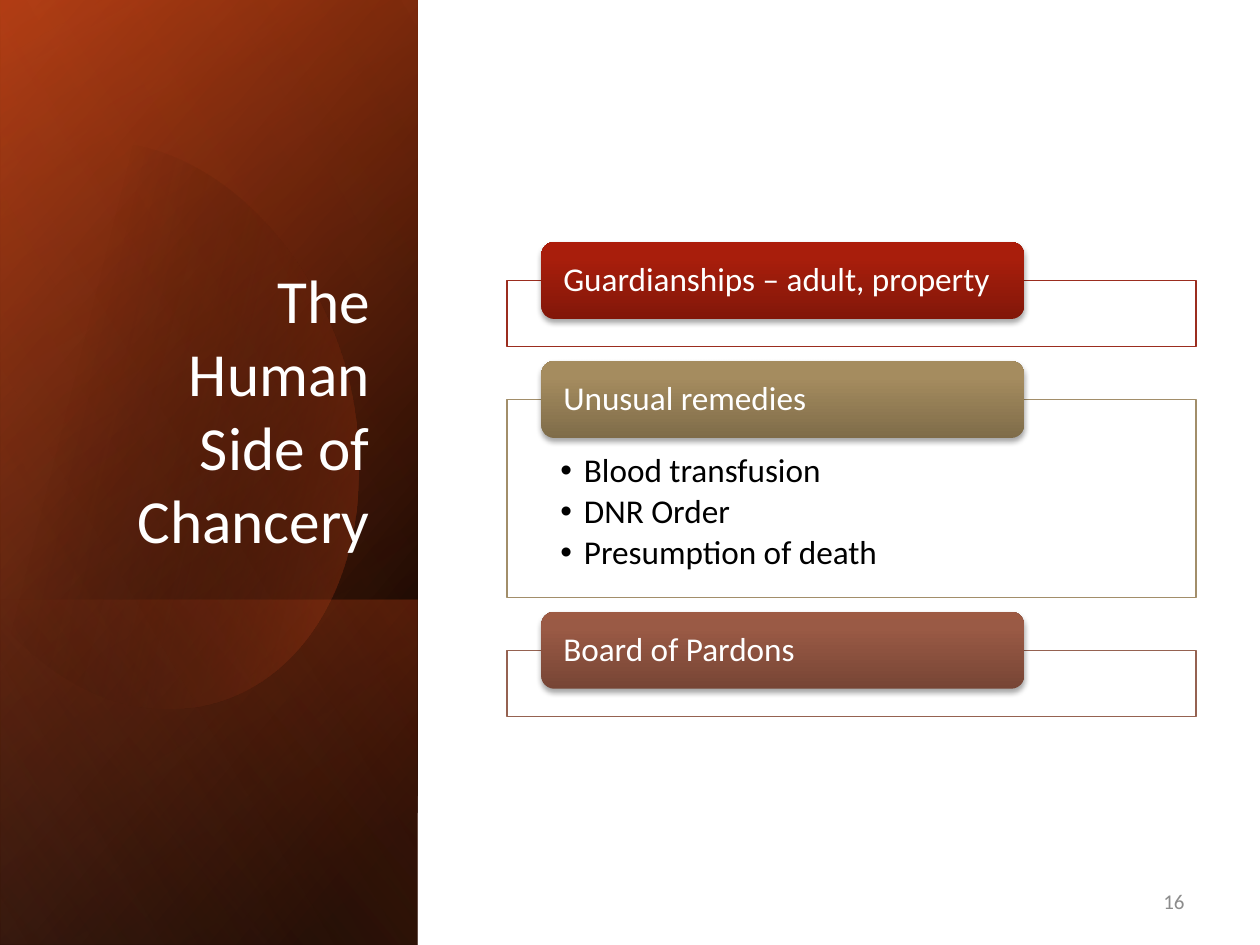
from dataclasses import dataclass
from typing import Any

import pptx
import pptx.dml.color
import pptx.enum.shapes
import pptx.enum.text
import pptx.oxml
import pptx.oxml.ns
import pptx.util

Pt = pptx.util.Pt
Anchor = pptx.enum.text.MSO_ANCHOR
Align = pptx.enum.text.PP_ALIGN
ShapeType = pptx.enum.shapes.MSO_SHAPE
Stop = tuple[int, str, int]


@dataclass(frozen=True)
class Theme:
    font: str = "Calibri"
    white: str = "FFFFFF"
    black: str = "000000"
    grey: str = "8C8C8C"
    rust: str = "D34817"
    brown: str = "9E3611"
    peach: str = "EF8C6A"
    title_size: float = 35
    body_size: float = 19
    number_size: float = 12


@dataclass(frozen=True)
class Box:
    left: float
    top: float
    width: float
    height: float

    def lengths(self) -> list[int]:
        return [Pt(value) for value in (self.left, self.top, self.width, self.height)]


@dataclass(frozen=True)
class Panel:
    box: Box
    stops: tuple[Stop, ...]
    angle: float


@dataclass(frozen=True)
class Card:
    heading: str
    frame_height: float
    line: str
    shades: tuple[str, str, str]
    items: tuple[str, ...] = ()


THEME = Theme()
SIDE = Box(-150.5, 150.5, 540, 238.5)
PANELS = (
    Panel(SIDE, ((8, THEME.black, 100), (100, THEME.brown, 100)), 50),
    Panel(SIDE, ((0, THEME.black, 0), (99, THEME.rust, 46)), 30),
    Panel(Box(20.75, 322.25, 197.5, 238.5), ((2, THEME.rust, 29), (100, THEME.black, 30)), 130),
)
GLOW = Panel(SIDE, ((0, THEME.black, 0), (99, THEME.peach, 11)), 120)
ARC_STOPS = ((29, THEME.black, 0), (100, THEME.rust, 43))
ARC_START = (69, 82)
ARC_SEGMENTS = (
    ((123, 88), (176, 138), (197, 209)),
    ((221, 297), (189, 382), (123, 401)),
    ((82, 413), (38, 396), (5, 360)),
    ((-2, 351),),
    ((-18, 120),),
    ((-11, 111),),
    ((1, 99), (16, 90), (32, 85)),
    ((45, 82), (57, 81), (69, 82)),
)
CARDS = (
    Card("Guardianships – adult, property", 37.8, "9B2D1F", ("821709", "A81E0C", "AC1B09")),
    Card("Unusual remedies", 113.1, "A28E6A", ("7F6C49", "A58C5F", "A78D5E"),
         ("Blood transfusion", "DNR Order", "Presumption of death")),
    Card("Board of Pardons", 37.8, "956251", ("774535", "9A5A45", "9D5A43")),
)
FRAME_LEFT, FRAME_TOP, FRAME_WIDTH, FRAME_GAP = 289.7, 160.4, 393.8, 30.2
PILL_INDENT, PILL_RISE, PILL_WIDTH, PILL_HEIGHT = 19.7, 22.1, 275.8, 44


def apply_format(target: Any, values: dict[str, Any]) -> None:
    for name, value in values.items():
        setattr(target, name, value)


def drawing_xml(text: str) -> Any:
    return pptx.oxml.parse_xml(text.replace(">", f" {pptx.oxml.ns.nsdecls('a')}>", 1))


def color(value: str) -> pptx.dml.color.RGBColor:
    return pptx.dml.color.RGBColor.from_string(value)


def fill_gradient(shape: Any, stops: tuple[Stop, ...], angle: float) -> None:
    marks = "".join(
        f'<a:gs pos="{position * 1000}"><a:srgbClr val="{shade}">'
        f'<a:alpha val="{opacity * 1000}"/></a:srgbClr></a:gs>'
        for position, shade, opacity in stops
    )
    gradient = drawing_xml(
        f'<a:gradFill rotWithShape="1"><a:gsLst>{marks}</a:gsLst>'
        f'<a:lin ang="{round(angle * 60000)}" scaled="0"/></a:gradFill>'
    )
    shape.shadow.inherit = False
    shape.line.fill.background()
    shape.fill.background()
    properties = shape._element.spPr
    properties.replace(properties.find(pptx.oxml.ns.qn("a:noFill")), gradient)


def write(shape: Any, lines: tuple[str, ...], size: float, shade: str,
          frame_values: dict[str, Any], paragraph_values: dict[str, Any]) -> None:
    frame = shape.text_frame
    frame.text = "\n".join(lines)
    apply_format(frame, {"word_wrap": True, "auto_size": pptx.enum.text.MSO_AUTO_SIZE.NONE, **frame_values})
    for paragraph in frame.paragraphs:
        apply_format(paragraph, {"space_before": Pt(0), **paragraph_values})
        apply_format(paragraph.runs[0].font, {"name": THEME.font, "size": Pt(size)})
        paragraph.runs[0].font.color.rgb = color(shade)


def place(shape: Any, box: Box) -> None:
    apply_format(shape, dict(zip(("left", "top", "width", "height"), box.lengths())))
    shape._element.getparent().append(shape._element)


def set_indent(shape: Any, left: float, first: float) -> None:
    for paragraph in shape.text_frame.paragraphs:
        properties = paragraph._p.get_or_add_pPr()
        properties.set("marL", str(Pt(left)))
        properties.set("indent", str(Pt(first)))


def draw_panel(slide: Any, panel: Panel) -> None:
    shape = slide.shapes.add_shape(ShapeType.RECTANGLE, *panel.box.lengths())
    shape.rotation = 90
    shape._element.spPr.find(pptx.oxml.ns.qn("a:xfrm")).set("flipH", "1")
    fill_gradient(shape, panel.stops, panel.angle)


def draw_arc(slide: Any) -> None:
    points = [(Pt(x), Pt(y)) for segment in ARC_SEGMENTS for x, y in segment]
    builder = slide.shapes.build_freeform(Pt(ARC_START[0]), Pt(ARC_START[1]))
    builder.add_line_segments(points, close=True)
    shape = builder.convert_to_shape()
    lines = iter(list(shape._element.iter(pptx.oxml.ns.qn("a:lnTo"))))
    for segment in ARC_SEGMENTS:
        members = [next(lines) for _ in segment]
        if len(members) == 3:
            curve = drawing_xml("<a:cubicBezTo></a:cubicBezTo>")
            members[0].addprevious(curve)
            for member in members:
                curve.append(member[0])
                member.getparent().remove(member)
    fill_gradient(shape, ARC_STOPS, 14)


def draw_card(slide: Any, card: Card, top: float, body: Any) -> None:
    frame_box = Box(FRAME_LEFT, top, FRAME_WIDTH, card.frame_height)
    frame = slide.shapes.add_shape(ShapeType.RECTANGLE, *frame_box.lengths())
    frame.shadow.inherit = False
    frame.fill.solid()
    frame.fill.fore_color.rgb = color(THEME.white)
    frame.line.color.rgb = color(card.line)
    frame.line.width = Pt(0.75)
    if card.items:
        place(body, frame_box)
        write(body, card.items, THEME.body_size, THEME.black,
              {"margin_left": Pt(30.5), "margin_right": Pt(30.5), "margin_top": Pt(31), "margin_bottom": Pt(10.8)},
              {"line_spacing": 0.9, "space_after": Pt(2.85)})
        set_indent(body, 13.5, -13.5)
    pill_box = Box(FRAME_LEFT + PILL_INDENT, top - PILL_RISE, PILL_WIDTH, PILL_HEIGHT)
    pill = slide.shapes.add_shape(ShapeType.ROUNDED_RECTANGLE, *pill_box.lengths())
    fill_gradient(pill, tuple((position, shade, 100) for position, shade in zip((0, 80, 100), card.shades)), 270)
    pill._element.spPr.find(pptx.oxml.ns.qn("a:effectLst")).append(drawing_xml(
        f'<a:outerShdw blurRad="{Pt(3.1)}" dist="{Pt(1.8)}" dir="5400000" rotWithShape="0">'
        f'<a:srgbClr val="{THEME.black}"><a:alpha val="35000"/></a:srgbClr></a:outerShdw>'
    ))
    write(pill, (card.heading,), THEME.body_size, THEME.white,
          {"margin_left": Pt(10.4), "margin_right": Pt(10), "margin_top": 0, "margin_bottom": 0,
           "vertical_anchor": Anchor.MIDDLE},
          {"line_spacing": 0.9, "alignment": Align.LEFT})


def main() -> None:
    presentation = pptx.Presentation()
    apply_format(presentation, {"slide_width": Pt(720), "slide_height": Pt(540)})
    slide = presentation.slides.add_slide(presentation.slide_layouts[1])
    title, body = slide.placeholders
    for panel in PANELS:
        draw_panel(slide, panel)
    draw_arc(slide)
    draw_panel(slide, GLOW)
    place(title, Box(34.2, 132.5, 184.3, 188.9))
    write(title, ("The Human Side of Chancery",), THEME.title_size, THEME.white,
          {"vertical_anchor": Anchor.BOTTOM, "margin_left": Pt(14)}, {"alignment": Align.RIGHT})
    set_indent(title, 0, 72)
    top = FRAME_TOP
    for card in CARDS:
        draw_card(slide, card, top, body)
        top += card.frame_height + FRAME_GAP
    number = slide.shapes.add_textbox(*Box(516, 500.5, 168, 28.75).lengths())
    write(number, ("16",), THEME.number_size, THEME.grey,
          {"vertical_anchor": Anchor.MIDDLE}, {"alignment": Align.RIGHT})
    presentation.save("out.pptx")


if __name__ == "__main__":
    main()
